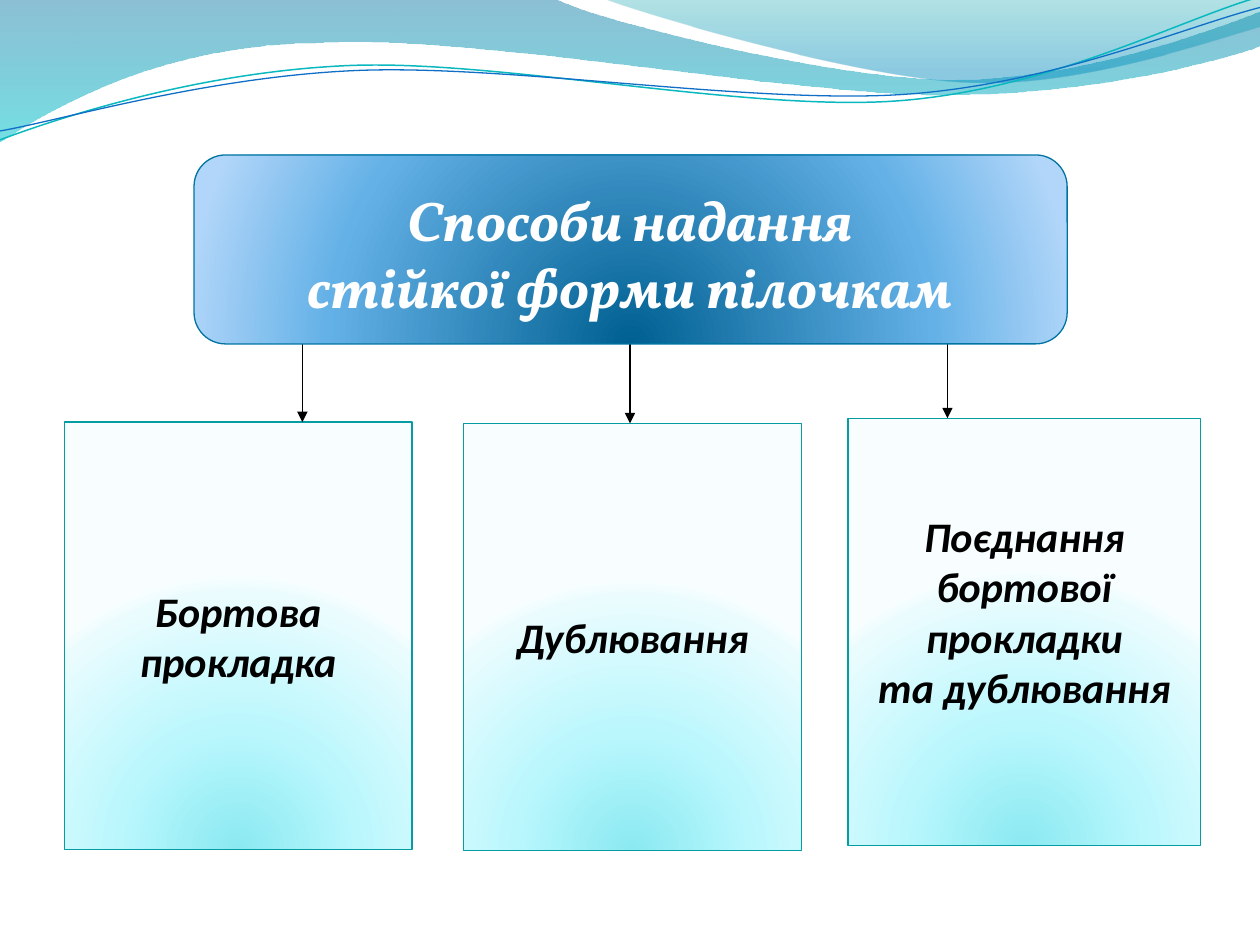
import dataclasses
import math
from typing import Optional

import pptx
import pptx.dml.color
import pptx.enum.shapes
import pptx.enum.text
import pptx.oxml
import pptx.oxml.ns
import pptx.util

EMU_PER_PX = 9144
NS = pptx.oxml.ns.nsdecls("a")
Point = tuple[int, int]
Stop = tuple[int, str, int]

RADIAL = '<a:path path="circle"><a:fillToRect l="50000" t="130000" r="50000" b="-30000"/></a:path>'
DOWNWARD = '<a:lin ang="5400000" scaled="0"/>'

TITLE_STOPS = [(0, "006091", 100), (68, "64B1E7", 100), (100, "B1D6F9", 100)]
METHOD_STOPS = [(0, "8BE9F1", 100), (43, "B9F7FD", 100),
                (93, "EAFCFE", 100), (100, "F8FEFF", 100)]


@dataclasses.dataclass
class Wave:
    start: Point
    segments: list[tuple[Point, ...]]
    stops: Optional[list[Stop]] = None
    line: str = ""
    weight: float = 0.75
    tilt: float = 0
    pivot: Point = (0, 0)


@dataclasses.dataclass
class Method:
    left: int
    top: int
    width: int
    arrow_x: int
    lines: list[str]
    bottom_inset: int = 5


WAVES = [
    Wave((0, -1), [
        ((440, -1),), ((476, 17), (664, 63), (758, 63)),
        ((853, 63), (958, 26), (1000, 9)), ((1001, 36),),
        ((983, 44), (870, 76), (746, 75)), ((622, 75), (382, 28), (257, 34)),
        ((129, 35), (46, 83), (-1, 113)), ((0, -1),),
    ], [(0, "0074A1", 45), (100, "00C6CF", 55)]),
    Wave((479, -1), [
        ((509, 11), (682, 62), (769, 65)), ((856, 69), (961, 32), (1000, 21)),
        ((1000, 0),), ((479, -1),),
    ], [(0, "00A1A9", 30), (80, "008BBF", 45)]),
    Wave((0, 111), [
        ((48, 93), (158, 57), (277, 52)), ((395, 47), (593, 89), (713, 80)),
        ((833, 71), (938, 15), (998, -2)),
    ], line="0AB8BF", weight=0.85, tilt=-2.7, pivot=(499, 58)),
    Wave((0, 104), [
        ((47, 96), (164, 61), (283, 56)), ((403, 51), (597, 83), (717, 75)),
        ((836, 67), (941, 21), (1000, 6)),
    ], line="0F6FC6", tilt=-2.7, pivot=(500, 59)),
]

METHODS = [
    Method(51, 335, 276, 240, ["Бортова", "прокладка"]),
    Method(368, 336, 268, 500, ["Дублювання"]),
    Method(673, 332, 280, 752,
           ["Поєднання", "бортової", "прокладки", "та дублювання"], 38),
]
METHOD_HEIGHT = 339
ARROW_TOP = 254


def px(length: float) -> int:
    return round(length * EMU_PER_PX)


def color(value: str) -> pptx.dml.color.RGBColor:
    return pptx.dml.color.RGBColor.from_string(value)


def fill_gradient(shape, stops: list[Stop], direction: str) -> None:
    shape.fill.background()
    empty_fill = shape._element.spPr.find(pptx.oxml.ns.qn("a:noFill"))
    stop_xml = "".join(
        f'<a:gs pos="{position * 1000}"><a:srgbClr val="{color(value)}">'
        f'<a:alpha val="{opacity * 1000}"/></a:srgbClr></a:gs>'
        for position, value, opacity in stops)
    gradient = pptx.oxml.parse_xml(
        f'<a:gradFill {NS} rotWithShape="1"><a:gsLst>{stop_xml}</a:gsLst>{direction}</a:gradFill>')
    shape._element.spPr.replace(empty_fill, gradient)


def set_line(shape, value: str, weight: float = 0.75) -> None:
    shape.line.color.rgb = color(value)
    shape.line.width = pptx.util.Pt(weight)


def set_text(shape, lines: list[str], font: str, size: int, value: str) -> None:
    frame = shape.text_frame
    frame.text = "\n".join(lines)
    frame.word_wrap = False
    frame.vertical_anchor = pptx.enum.text.MSO_ANCHOR.MIDDLE
    for paragraph in frame.paragraphs:
        paragraph.alignment = pptx.enum.text.PP_ALIGN.CENTER
        for run in paragraph.runs:
            run.font.name = font
            run.font.size = pptx.util.Pt(size)
            run.font.bold = run.font.italic = True
            run.font.color.rgb = color(value)


def level_point(point: Point, wave: Wave) -> tuple[int, int]:
    angle = math.radians(-wave.tilt)
    dx, dy = point[0] - wave.pivot[0], point[1] - wave.pivot[1]
    return (px(wave.pivot[0] + dx * math.cos(angle) - dy * math.sin(angle)),
            px(wave.pivot[1] + dx * math.sin(angle) + dy * math.cos(angle)))


def bend_segments(shape, segments: list[tuple[Point, ...]]) -> None:
    steps = iter(list(shape._element.spPr.iter(pptx.oxml.ns.qn("a:lnTo"))))
    for segment in segments:
        group = [next(steps) for _ in segment]
        if len(group) == 3:
            curve = pptx.oxml.parse_xml(f"<a:cubicBezTo {NS}/>")
            group[0].addprevious(curve)
            for step in group:
                curve.append(step[0])
                step.getparent().remove(step)


def draw_wave(slide, wave: Wave) -> None:
    outline = [level_point(point, wave) for segment in wave.segments for point in segment]
    builder = slide.shapes.build_freeform(*level_point(wave.start, wave))
    builder.add_line_segments(outline, close=bool(wave.stops))
    shape = builder.convert_to_shape()
    bend_segments(shape, wave.segments)
    shape.rotation = wave.tilt
    shape.shadow.inherit = False
    if wave.stops:
        fill_gradient(shape, wave.stops, DOWNWARD)
        shape.line.fill.background()
    else:
        shape.fill.background()
        set_line(shape, wave.line, wave.weight)


def draw_panel(slide, preset, box: tuple[int, int, int, int], stops: list[Stop], line: str):
    panel = slide.shapes.add_shape(preset, *map(px, box))
    fill_gradient(panel, stops, RADIAL)
    set_line(panel, line)
    panel.shadow.inherit = False
    return panel


def draw_method(slide, method: Method) -> None:
    panel = draw_panel(slide, pptx.enum.shapes.MSO_SHAPE.RECTANGLE,
                       (method.left, method.top, method.width, METHOD_HEIGHT),
                       METHOD_STOPS, "069CA3")
    set_text(panel, method.lines, "Calibri", 24, "000000")
    panel.text_frame.margin_bottom = px(method.bottom_inset)


def draw_arrow(slide, method: Method) -> None:
    arrow = slide.shapes.add_connector(
        pptx.enum.shapes.MSO_CONNECTOR.STRAIGHT, px(method.arrow_x), px(ARROW_TOP),
        px(method.arrow_x), px(method.top))
    set_line(arrow, "000000")
    properties = arrow._element.spPr
    properties.find(pptx.oxml.ns.qn("a:ln")).append(
        pptx.oxml.parse_xml(f'<a:tailEnd {NS} type="triangle"/>'))
    properties.append(pptx.oxml.parse_xml(f"<a:effectLst {NS}/>"))


def draw_title(slide) -> None:
    title = draw_panel(slide, pptx.enum.shapes.MSO_SHAPE.ROUNDED_RECTANGLE,
                       (154, 123, 693, 150), TITLE_STOPS, "0074A1")
    set_text(title, ["Способи надання", "стійкої форми пілочкам"], "Vollkorn", 32, "FFFFFF")
    frame = title.text_frame
    frame.margin_left = frame.margin_right = frame.margin_bottom = 0
    frame.margin_top = px(5)


def main() -> None:
    presentation = pptx.Presentation()
    presentation.slide_width, presentation.slide_height = px(1000), px(750)
    slide = presentation.slides.add_slide(presentation.slide_layouts.get_by_name("Blank"))
    for wave in WAVES:
        draw_wave(slide, wave)
    for method in METHODS:
        draw_method(slide, method)
    for method in METHODS:
        draw_arrow(slide, method)
    draw_title(slide)
    presentation.save("out.pptx")


if __name__ == "__main__":
    main()
